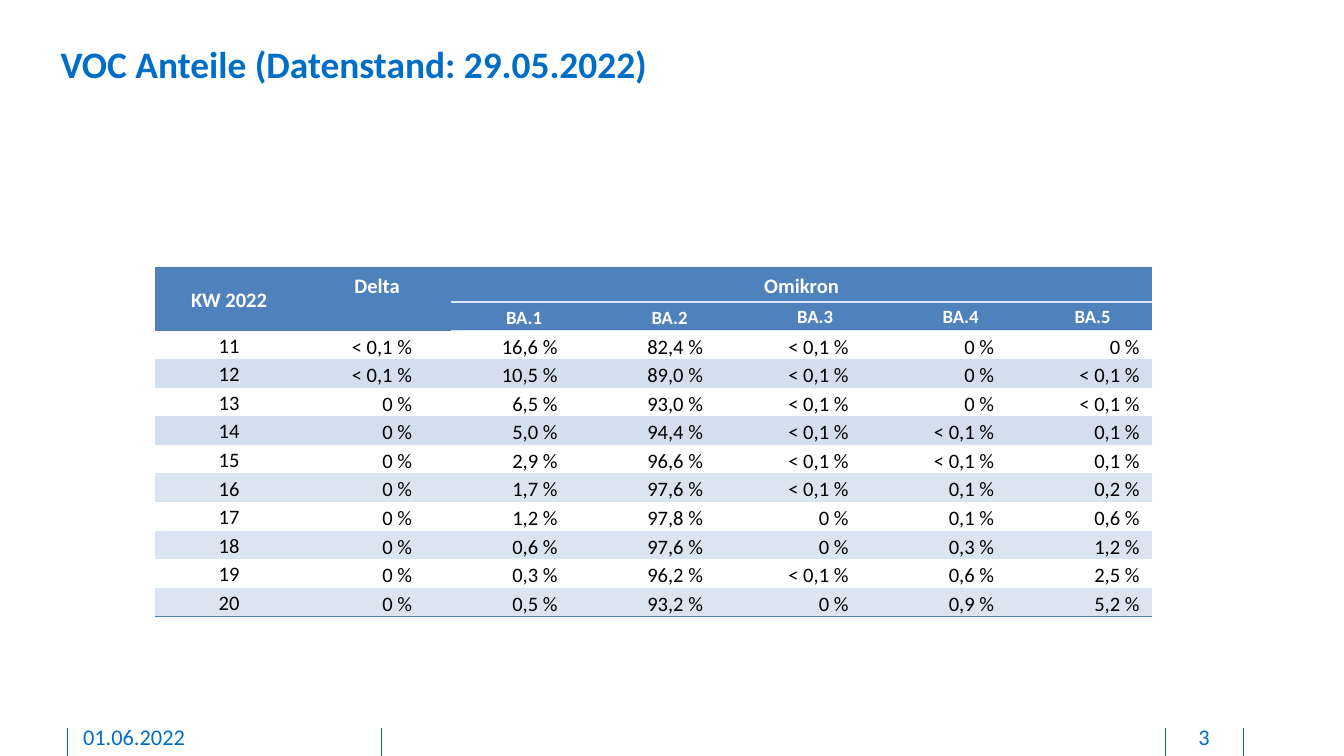
from dataclasses import dataclass
from lxml.etree import SubElement
from pptx import Presentation
from pptx.dml.color import RGBColor
from pptx.enum.shapes import MSO_CONNECTOR
from pptx.enum.text import MSO_ANCHOR, MSO_AUTO_SIZE, PP_ALIGN
from pptx.oxml.ns import qn
from pptx.slide import Slide
from pptx.table import Table, _Cell
from pptx.text.text import _Paragraph
from pptx.util import Cm, Pt

BLUE, HEAD, RULE = "006EC7", "4F81BD", "D9E2F3"
WHITE, BLACK = "FFFFFF", "000000"
DARK, LIGHT = "D3DFEE", "DBE5F1"
PLAIN = "{2D5ABB26-0587-4C30-8999-92F81FD0307C}"
WIDTHS = [2.8, 2.8, 2.75, 2.75, 2.75, 2.75, 2.24]
TOP_ROW, ROW = 0.66, 0.54
HEADS = [
    ["KW 2022", "Delta", "Omikron", "", "", "", ""],
    ["", "", "BA.1", "BA.2", "BA.3", "BA.4", "BA.5"],
]
FIRST = 11
SHARES = [
    ["< 0,1", "16,6", "82,4", "< 0,1", "0", "0"],
    ["< 0,1", "10,5", "89,0", "< 0,1", "0", "< 0,1"],
    ["0", "6,5", "93,0", "< 0,1", "0", "< 0,1"],
    ["0", "5,0", "94,4", "< 0,1", "< 0,1", "0,1"],
    ["0", "2,9", "96,6", "< 0,1", "< 0,1", "0,1"],
    ["0", "1,7", "97,6", "< 0,1", "0,1", "0,2"],
    ["0", "1,2", "97,8", "0", "0,1", "0,6"],
    ["0", "0,6", "97,6", "0", "0,3", "1,2"],
    ["0", "0,3", "96,2", "< 0,1", "0,6", "2,5"],
    ["0", "0,5", "93,2", "0", "0,9", "5,2"],
]


@dataclass
class Note:
    text: str
    left: float
    width: float
    align: PP_ALIGN


@dataclass
class Look:
    size: int
    color: str
    bold: bool = False
    align: PP_ALIGN = PP_ALIGN.LEFT
    space: float = 1.0


NOTES = [
    Note("01.06.2022", 1.57, 5.16, PP_ALIGN.LEFT),
    Note("3", 22.07, 1.37, PP_ALIGN.CENTER),
]
MARKS = [22.02, 7.21, 1.27, 23.5]


def paint(code: str) -> RGBColor:
    return RGBColor.from_string(code)


def style(para: _Paragraph, look: Look) -> None:
    para.alignment = look.align
    para.line_spacing = look.space
    font = para.font
    font.name, font.size, font.bold = "Calibri", Pt(look.size), look.bold
    font.color.rgb = paint(look.color)


def add_title(slide: Slide, text: str) -> None:
    title = slide.shapes.title
    title.left, title.top, title.width, title.height = Cm(0.89), Cm(0.66), Cm(11.68), Cm(1.11)
    frame = title.text_frame
    frame.text = text
    frame.word_wrap = False
    frame.auto_size = MSO_AUTO_SIZE.SHAPE_TO_FIT_TEXT
    frame.vertical_anchor = MSO_ANCHOR.TOP
    style(frame.paragraphs[0], Look(20, BLUE, True))


def add_note(slide: Slide, note: Note) -> None:
    box = slide.shapes.add_textbox(Cm(note.left), Cm(13.67), Cm(note.width), Cm(0.53))
    frame = box.text_frame
    frame.word_wrap = True
    frame.margin_left = frame.margin_right = frame.margin_top = 0
    frame.margin_bottom = Cm(0.13)
    frame.text = note.text
    style(frame.paragraphs[0], Look(12, BLUE, align=note.align))


def add_mark(slide: Slide, left: float) -> None:
    line = slide.shapes.add_connector(
        MSO_CONNECTOR.STRAIGHT, Cm(left), Cm(13.76), Cm(left), Cm(14.33))
    line.line.color.rgb = paint(BLUE)
    line.line.width = Pt(0.5)
    SubElement(line.element.spPr, qn("a:effectLst"))


def add_edge(cell: _Cell, side: str, color: str) -> None:
    edge = SubElement(cell._tc.get_or_add_tcPr(), qn(f"a:{side}"), w=str(Pt(1)))
    SubElement(SubElement(edge, qn("a:solidFill")), qn("a:srgbClr"), val=color)


def fill_cell(cell: _Cell, text: str, look: Look, back: str | None) -> None:
    cell.text = text
    cell.margin_left = cell.margin_right = Cm(0.13)
    cell.margin_top = cell.margin_bottom = 0
    cell.vertical_anchor = MSO_ANCHOR.MIDDLE
    if back:
        cell.fill.solid()
        cell.fill.fore_color.rgb = paint(back)
    else:
        cell.fill.background()
    para = cell.text_frame.paragraphs[0]
    style(para, look)
    if not text:
        SubElement(para._p, qn("a:endParaRPr"), sz=str(look.size * 100))


def fill_head(table: Table) -> None:
    for row, texts in enumerate(HEADS):
        look = Look(11 - row, WHITE, True, PP_ALIGN.CENTER, 1.15)
        for col, text in enumerate(texts):
            cell = table.cell(row, col)
            if col > 1:
                add_edge(cell, "lnT" if row else "lnB", RULE)
            fill_cell(cell, text, look, HEAD)
            if row and col > 3:
                cell.vertical_anchor = MSO_ANCHOR.TOP
    table.cell(0, 0).merge(table.cell(1, 0))
    table.cell(0, 2).merge(table.cell(0, 6))


def fill_body(table: Table) -> None:
    week = Look(11, BLACK, align=PP_ALIGN.CENTER, space=1.1)
    share = Look(11, BLACK, align=PP_ALIGN.RIGHT, space=1.15)
    last = len(WIDTHS) - 1
    for row, shares in enumerate(SHARES):
        back = (DARK if row < 5 else LIGHT) if row % 2 else None
        texts = [str(FIRST + row)] + [f"{part} %" for part in shares]
        for col, text in enumerate(texts):
            cell = table.cell(row + len(HEADS), col)
            if row == len(SHARES) - 1:
                add_edge(cell, "lnB", HEAD)
            fill_cell(cell, text, share if col else week, back)
            if col:
                cell.margin_right = Cm(0.23 if col == last else 0.74)


def add_grid(slide: Slide) -> None:
    count = len(HEADS) + len(SHARES)
    tall = TOP_ROW + ROW * (count - 1)
    frame = slide.shapes.add_table(
        count, len(WIDTHS), Cm(2.93), Cm(5.05), Cm(sum(WIDTHS)), Cm(tall))
    table = frame.table
    table.first_row = table.horz_banding = False
    for node in frame.element.iter(qn("a:tableStyleId")):
        node.text = PLAIN
    for col, width in zip(table.columns, WIDTHS):
        col.width = Cm(width)
    for index, row in enumerate(table.rows):
        row.height = Cm(ROW if index else TOP_ROW)
    fill_head(table)
    fill_body(table)


def main() -> None:
    deck = Presentation()
    deck.slide_width, deck.slide_height = Cm(25.4), Cm(14.29)
    slide = deck.slides.add_slide(deck.slide_layouts[5])
    for left in MARKS:
        add_mark(slide, left)
    add_title(slide, "VOC Anteile (Datenstand: 29.05.2022)")
    for note in NOTES:
        add_note(slide, note)
    add_grid(slide)
    deck.save("out.pptx")


if __name__ == "__main__":
    main()
